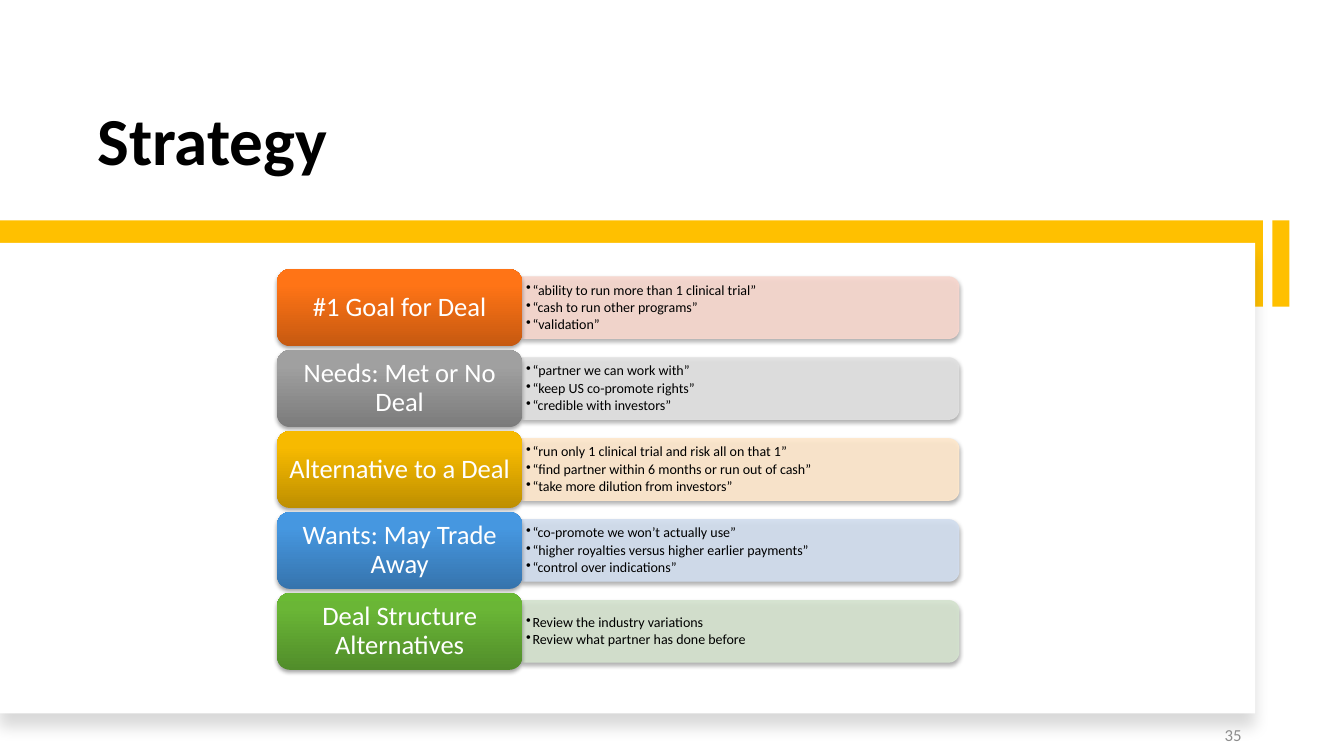
"""Build the deal strategy slide: five labelled rows of negotiating points."""
from copy import deepcopy
from lxml import etree
from pptx import Presentation
from pptx import util as u
from pptx.dml.color import RGBColor
from pptx.enum import shapes, text
from pptx.oxml.ns import qn

Pt = u.Pt
BLACK = RGBColor(0, 0, 0)
WHITE = RGBColor(255, 255, 255)
GREY = RGBColor(0x8C, 0x8C, 0x8C)
GOLD = RGBColor(0xFF, 0xC0, 0x00)
ORANGE_SHADES = [RGBColor(0xC6, 0x59, 0x10), RGBColor(0xFF, 0x74, 0x16), RGBColor(0xFF, 0x75, 0x17)]
GREY_SHADES = [RGBColor(0x7B, 0x7B, 0x7B), RGBColor(0xA0, 0xA0, 0xA0), RGBColor(0xA1, 0xA1, 0xA1)]
GOLD_SHADES = [RGBColor(0xBE, 0x8F, 0x00), RGBColor(0xF7, 0xBA, 0x00), RGBColor(0xF8, 0xBB, 0x00)]
BLUE_SHADES = [RGBColor(0x36, 0x74, 0xAD), RGBColor(0x46, 0x97, 0xE0), RGBColor(0x44, 0x98, 0xE4)]
GREEN_SHADES = [RGBColor(0x51, 0x8D, 0x2A), RGBColor(0x6A, 0xB6, 0x36), RGBColor(0x6A, 0xBA, 0x34)]
PALE_ORANGE = RGBColor(0xF8, 0xD7, 0xCE)
PALE_GREY = RGBColor(0xE1, 0xE1, 0xE1)
PALE_GOLD = RGBColor(0xFF, 0xE8, 0xCC)
PALE_BLUE = RGBColor(0xD2, 0xDE, 0xEF)
PALE_GREEN = RGBColor(0xD5, 0xE3, 0xCF)

ROWS = [
    ("#1 Goal for Deal", ORANGE_SHADES, PALE_ORANGE,
     ["“ability to run more than 1 clinical trial”", "“cash to run other programs”", "“validation”"]),
    ("Needs: Met or No Deal", GREY_SHADES, PALE_GREY,
     ["“partner we can work with”", "“keep US co-promote rights”", "“credible with investors”"]),
    ("Alternative to a Deal", GOLD_SHADES, PALE_GOLD,
     ["“run only 1 clinical trial and risk all on that 1”",
      "“find partner within 6 months or run out of cash”", "“take more dilution from investors”"]),
    ("Wants: May Trade Away", BLUE_SHADES, PALE_BLUE,
     ["“co-promote we won’t actually use”", "“higher royalties versus higher earlier payments”",
      "“control over indications”"]),
    ("Deal Structure Alternatives", GREEN_SHADES, PALE_GREEN,
     ["Review the industry variations", "Review what partner has done before"]),
]
LABEL_LEFT, LABEL_WIDTH, LABEL_HEIGHT = 198, 175, 55
PANEL_LEFT, PANEL_WIDTH, PANEL_HEIGHT = 373, 312, 44
FIRST_CENTRE, ROW_PITCH = 219.8, 57.8

deck = Presentation()
deck.slide_width, deck.slide_height = Pt(960), Pt(540)
slide = deck.slides.add_slide(deck.slide_layouts[6])


def add_block(kind, left, top, width, height, color, shadow=None):
    block = slide.shapes.add_shape(kind, Pt(left), Pt(top), Pt(width), Pt(height))
    block.shadow.inherit = False
    block.fill.solid()
    block.fill.fore_color.rgb = color
    block.line.fill.background()
    if shadow:
        opacity, blur, distance = shadow
        effects = block._element.spPr.find(qn("a:effectLst"))
        outer = etree.SubElement(effects, qn("a:outerShdw"), blurRad=str(Pt(blur)),
                                 dist=str(Pt(distance)), dir="5400000", algn="ctr", rotWithShape="0")
        black = etree.SubElement(outer, qn("a:srgbClr"), val="000000")
        etree.SubElement(black, qn("a:alpha"), val=str(opacity * 1000))
    return block


def write(holder, lines, size, color, anchor, align, insets=(7.2, 3.6)):
    frame = holder.text_frame
    frame.word_wrap = True
    frame.vertical_anchor = anchor
    frame.margin_left = frame.margin_right = Pt(insets[0])
    frame.margin_top = frame.margin_bottom = Pt(insets[1])
    frame.text = "\n".join(lines)
    for paragraph in frame.paragraphs:
        paragraph.alignment = align
        paragraph.line_spacing = 0.9
        paragraph.font.name = "Calibri"
        paragraph.font.size = Pt(size)
        paragraph.font.color.rgb = color
    return frame.paragraphs


KIND, ANCHOR, ALIGN = shapes.MSO_SHAPE, text.MSO_ANCHOR, text.PP_ALIGN
ROW_SHADOW = (35, 3.1, 1.8)

title = slide.shapes.add_textbox(Pt(62.6), Pt(30.2), Pt(793), Pt(102.2))
write(title, ["Strategy"], 48, BLACK, ANCHOR.BOTTOM, ALIGN.LEFT)[0].font.bold = True

add_block(KIND.RECTANGLE, 0, 157.5, 902, 61.5, GOLD)
add_block(KIND.RECTANGLE, 0, 173.5, 896.5, 336, WHITE, (15, 11, 10))
add_block(KIND.RECTANGLE, 908.8, 157.5, 12.2, 61.5, GOLD)

page_number = slide.shapes.add_textbox(Pt(678), Pt(511), Pt(216), Pt(29))
write(page_number, ["35"], 12, GREY, ANCHOR.MIDDLE, ALIGN.RIGHT)

for row, (heading, shades, pale, points) in enumerate(ROWS):
    centre = FIRST_CENTRE + row * ROW_PITCH

    panel = add_block(KIND.ROUND_2_SAME_RECTANGLE, PANEL_LEFT + (PANEL_WIDTH - PANEL_HEIGHT) / 2,
                      centre - PANEL_WIDTH / 2, PANEL_HEIGHT, PANEL_WIDTH, pale, ROW_SHADOW)
    panel.rotation = 90
    panel.line.color.rgb = pale
    panel.line.width = Pt(0.75)
    for paint in panel._element.spPr.iter(qn("a:solidFill")):
        etree.SubElement(paint[0], qn("a:alpha"), val="90000")

    details = slide.shapes.add_textbox(Pt(PANEL_LEFT), Pt(centre - 20), Pt(310), Pt(40))
    for paragraph in write(details, points, 10, BLACK, ANCHOR.MIDDLE, ALIGN.LEFT, (2.9, 1.4)):
        paragraph.space_after = Pt(1.5)
        properties = paragraph._p.get_or_add_pPr()
        properties.set("marL", str(Pt(4.5)))
        properties.set("indent", str(Pt(-4.5)))
        bullet = etree.Element(qn("a:buChar"), char="•")
        properties.find(qn("a:defRPr")).addprevious(bullet)

    label = add_block(KIND.ROUNDED_RECTANGLE, LABEL_LEFT, centre - LABEL_HEIGHT / 2,
                      LABEL_WIDTH, LABEL_HEIGHT, shades[0], ROW_SHADOW)
    label.fill.gradient()
    label.fill.gradient_angle = 90
    stops = label._element.spPr.find(".//" + qn("a:gsLst"))
    stops.append(deepcopy(stops[1]))
    for stop, position, shade in zip(label.fill.gradient_stops, (0, 0.8, 1), shades):
        stop.position = position
        stop.color.rgb = shade
    write(label, [heading], 19, WHITE, ANCHOR.MIDDLE, ALIGN.CENTER, (5.5, 2.8))

deck.save("out.pptx")
